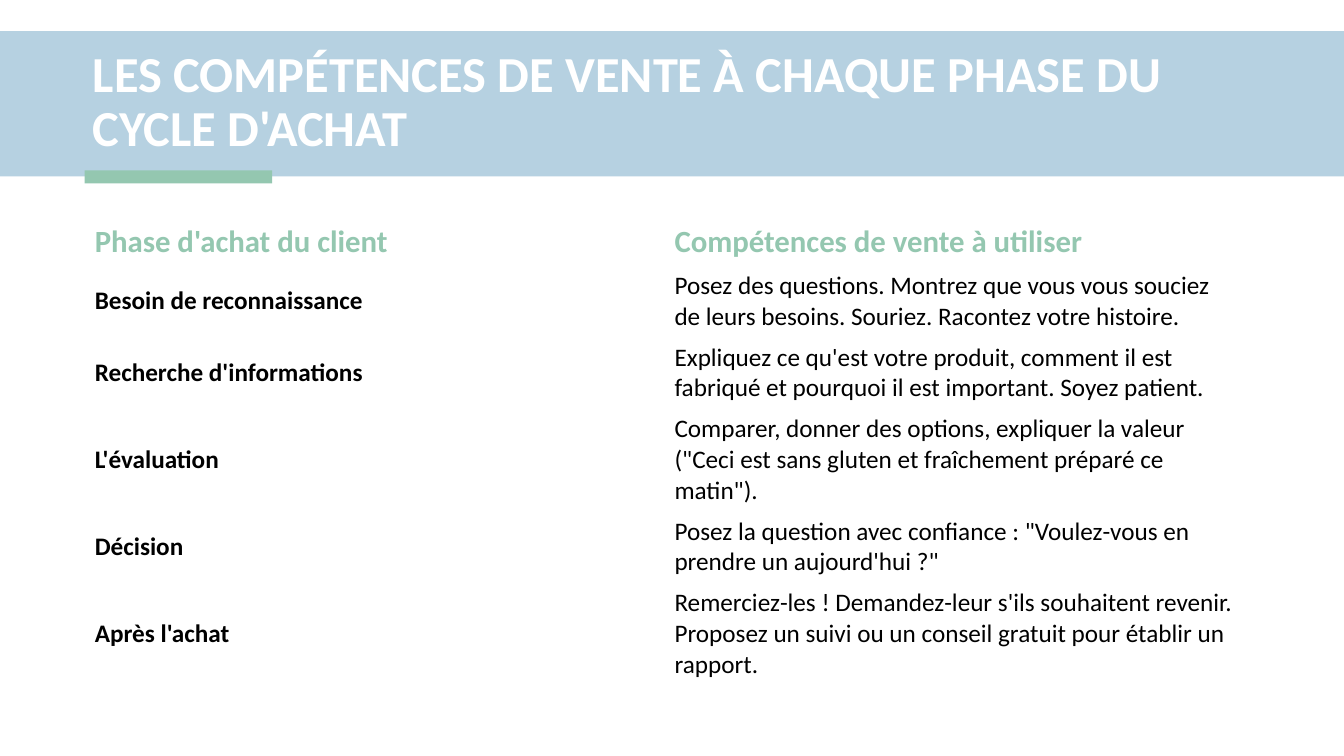
from pptx import Presentation
from pptx.dml.color import RGBColor
from pptx.enum.shapes import MSO_SHAPE
from pptx.enum.text import MSO_ANCHOR, MSO_AUTO_SIZE, PP_ALIGN
from pptx.util import Inches, Pt

COLORS = {"band": "B6D1E1", "accent": "94C7B0", "title": "FFFFFF", "text": "000000"}
FONT = "Calibri"
SLIDE_W, SLIDE_H = 13.33, 7.5
LINE_H, CELL_PAD = 0.305, 0.1

TITLE = "LES COMPÉTENCES DE VENTE À CHAQUE PHASE DU CYCLE D'ACHAT"
HEADER = ("Phase d'achat du client", "Compétences de vente à utiliser")
PHASES = [
    ("Besoin de reconnaissance", 2,
     "Posez des questions. Montrez que vous vous souciez de leurs besoins. "
     "Souriez. Racontez votre histoire."),
    ("Recherche d'informations", 2,
     "Expliquez ce qu'est votre produit, comment il est fabriqué et pourquoi "
     "il est important. Soyez patient."),
    ("L'évaluation", 3,
     "Comparer, donner des options, expliquer la valeur (\"Ceci est sans gluten "
     "et fraîchement préparé ce matin\")."),
    ("Décision", 2,
     "Posez la question avec confiance : \"Voulez-vous en prendre un aujourd'hui ?\""),
    ("Après l'achat", 3,
     "Remerciez-les ! Demandez-leur s'ils souhaitent revenir. Proposez un suivi "
     "ou un conseil gratuit pour établir un rapport."),
]


def color(name):
    return RGBColor.from_string(COLORS[name])


def style(p, size, name, bold):
    for r in p.runs:
        r.font.name = FONT
        r.font.size = Pt(size)
        r.font.bold = bold
        r.font.color.rgb = color(name)


def add_bar(slide, x, y, w, h, name):
    sp = slide.shapes.add_shape(
        MSO_SHAPE.RECTANGLE, Inches(x), Inches(y), Inches(w), Inches(h))
    sp.shadow.inherit = False
    sp.fill.solid()
    sp.fill.fore_color.rgb = color(name)
    sp.line.fill.background()


def add_title_band(slide, x, y, w, h):
    add_bar(slide, x, y, w, h, "band")
    add_bar(slide, x + 0.84, y + h - 0.06, 1.86, 0.13, "accent")
    title = slide.shapes.title
    slide.shapes._spTree.append(title._element)
    title.left, title.top = Inches(x + 0.82), Inches(y + 0.1)
    title.width, title.height = Inches(11.15), Inches(h - 0.21)
    tf = title.text_frame
    tf.text = TITLE
    tf.word_wrap = True
    tf.auto_size = MSO_AUTO_SIZE.NONE
    tf.vertical_anchor = MSO_ANCHOR.MIDDLE
    p = tf.paragraphs[0]
    p.alignment = PP_ALIGN.LEFT
    p.line_spacing = 0.9
    style(p, 36, "title", True)


def fill_cell(cell, text, size, name, bold):
    cell.fill.background()
    cell.vertical_anchor = MSO_ANCHOR.MIDDLE
    cell.text = text
    style(cell.text_frame.paragraphs[0], size, name, bold)


def add_phase_table(slide, x, y, w, header_h):
    heights = [header_h] + [n * LINE_H + CELL_PAD for _, n, _ in PHASES]
    table = slide.shapes.add_table(
        len(heights), len(HEADER), Inches(x), Inches(y),
        Inches(w), Inches(sum(heights))).table
    table.first_row = False
    table.horz_banding = False
    for row, height in zip(table.rows, heights):
        row.height = Inches(height)
    for col, text in enumerate(HEADER):
        table.columns[col].width = Inches(w / len(HEADER))
        fill_cell(table.cell(0, col), text, 22, "accent", True)
    for row, (phase, _, skills) in enumerate(PHASES, 1):
        fill_cell(table.cell(row, 0), phase, 18, "text", True)
        fill_cell(table.cell(row, 1), skills, 18, "text", False)
    tbl_pr = table._tbl.tblPr
    tbl_pr.find("{*}tableStyleId").text = "{2D5ABB26-0587-4C30-8999-92F81FD0307C}"


def main():
    prs = Presentation()
    prs.slide_width, prs.slide_height = Inches(SLIDE_W), Inches(SLIDE_H)
    slide = prs.slides.add_slide(prs.slide_layouts[5])
    add_title_band(slide, 0, 0.31, SLIDE_W, 1.44)
    add_phase_table(slide, 0.84, 2.16, 11.5, 0.47)
    prs.save("out.pptx")


if __name__ == "__main__":
    main()
